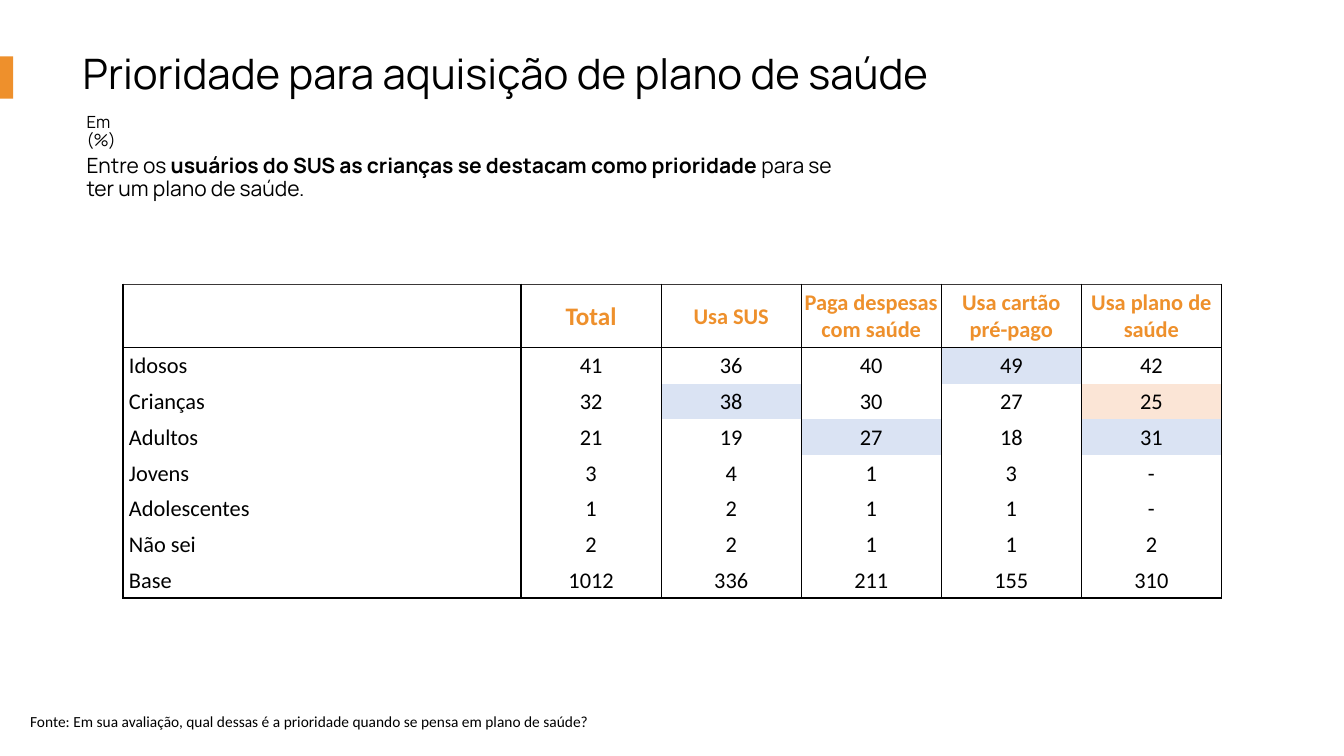
import pptx
import pptx.util
import pptx.dml.color
import pptx.enum.shapes
import pptx.enum.text
import pptx.oxml
from lxml import etree

PX = 4572
THEME = {
    "black": "000000", "accent": "EE902C", "frame": "3B3838",
    "high": "DAE3F3", "low": "FBE5D6",
    "heading": "Manrope", "text": "Calibri",
    "title": 30, "lead": 15, "unit": 12, "source": 11,
    "total": 18, "cell": 16,
}


def write(tf, parts, font, size, color="black", spacing=None, align="LEFT"):
    tf.word_wrap = True
    p = tf.paragraphs[0]
    p.text = "".join(text for text, _ in parts) if len(parts) == 1 else ""
    p.alignment = getattr(pptx.enum.text.PP_ALIGN, align)
    if spacing:
        p.line_spacing = spacing
    if len(parts) > 1:
        for text, _ in parts:
            p.add_run().text = text
    bolds = [bold for _, bold in parts]
    for i, r in enumerate(p.runs):
        r.font.name = THEME[font]
        r.font.size = pptx.util.Pt(THEME[size])
        r.font.bold = bolds[min(i, len(bolds) - 1)]
        r.font.color.rgb = pptx.dml.color.RGBColor.from_string(THEME[color])


def set_border(cell, side, width, color="black"):
    tc_pr = cell._tc.get_or_add_tcPr()
    ln = etree.SubElement(tc_pr, pptx.oxml.ns.qn("a:" + side), w=str(int(width * 12700)))
    if width:
        fill = etree.SubElement(ln, pptx.oxml.ns.qn("a:solidFill"))
        etree.SubElement(fill, pptx.oxml.ns.qn("a:srgbClr"), val=THEME[color])
    else:
        etree.SubElement(ln, pptx.oxml.ns.qn("a:noFill"))


prs = pptx.Presentation()
prs.slide_width = 2667 * PX
prs.slide_height = 1500 * PX
slide = prs.slides.add_slide(prs.slide_layouts[5])

title = slide.shapes.title
title.left, title.top, title.width, title.height = [n * PX for n in (144, 96, 1854, 122)]
tf = title.text_frame
write(tf, [("Prioridade para aquisição de plano de saúde", False)], "heading", "title", spacing=0.9)
tf.vertical_anchor = pptx.enum.text.MSO_ANCHOR.TOP
tf.auto_size = pptx.enum.text.MSO_AUTO_SIZE.NONE

texts = [
    ((152, 298, 1556, 122), "heading", "lead", 0.9, [
        ("Entre os ", False),
        ("usuários do SUS as crianças se destacam como prioridade ", True),
        ("para se ter um plano de saúde.", False)]),
    ((152, 216, 144, 60), "heading", "unit", 0.9, [("Em (%)", False)]),
    ((40, 1404, 2446, 96), "text", "source", None, [
        ("Fonte: Em sua avaliação, qual dessas é a prioridade quando se pensa em plano de saúde?", False)]),
]
for box, font, size, spacing, parts in texts:
    sp = slide.shapes.add_textbox(*[n * PX for n in box])
    write(sp.text_frame, parts, font, size, spacing=spacing)

sp = slide.shapes.add_shape(
    pptx.enum.shapes.MSO_SHAPE.RECTANGLE, 0, 112 * PX, 26 * PX, 84 * PX)
sp.shadow.inherit = False
sp.fill.solid()
sp.fill.fore_color.rgb = pptx.dml.color.RGBColor.from_string(THEME["accent"])
sp.line.fill.background()

rows = [
    ["", "Total", "Usa SUS", "Paga despesas com saúde", "Usa cartão\vpré-pago", "Usa plano de saúde"],
    ["Idosos", "41", "36", "40", "49", "42"],
    ["Crianças", "32", "38", "30", "27", "25"],
    ["Adultos", "21", "19", "27", "18", "31"],
    ["Jovens", "3", "4", "1", "3", "-"],
    ["Adolescentes", "1", "2", "1", "1", "-"],
    ["Não sei", "2", "2", "1", "1", "2"],
    ["Base", "1012", "336", "211", "155", "310"],
]
highlights = {(1, 4): "high", (2, 2): "high", (2, 5): "low", (3, 3): "high", (3, 5): "high"}
col_widths = [790] + [278] * 5
row_heights = [126] + [71] * 7
vertical_widths = [1, 1, 0.5, 0.5, 0.5, 0.5, 1]
horizontal_widths = [1, 1] + [0] * 6 + [1]

table = slide.shapes.add_table(
    len(rows), len(col_widths), 244 * PX, 564 * PX,
    sum(col_widths) * PX, sum(row_heights) * PX).table
table.first_row = False
table.horz_banding = False
for column, width in zip(table.columns, col_widths):
    column.width = width * PX
for row, height in zip(table.rows, row_heights):
    row.height = height * PX

for i, row in enumerate(rows):
    for j, text in enumerate(row):
        cell = table.cell(i, j)
        cell.vertical_anchor = pptx.enum.text.MSO_ANCHOR.MIDDLE
        cell.margin_left = (2 if j else 12) * PX
        cell.margin_right = cell.margin_top = 2 * PX
        cell.margin_bottom = 0
        write(cell.text_frame, [(text, i == 0)], "text",
              "total" if (i, j) == (0, 1) else "cell",
              "black" if i else "accent", align="CENTER" if j else "LEFT")
        set_border(cell, "lnL", vertical_widths[j])
        set_border(cell, "lnR", vertical_widths[j + 1])
        set_border(cell, "lnT", horizontal_widths[i], "black" if i else "frame")
        set_border(cell, "lnB", horizontal_widths[i + 1])
        if (i, j) in highlights:
            cell.fill.solid()
            cell.fill.fore_color.rgb = pptx.dml.color.RGBColor.from_string(THEME[highlights[i, j]])
        else:
            cell.fill.background()

prs.save("out.pptx")
